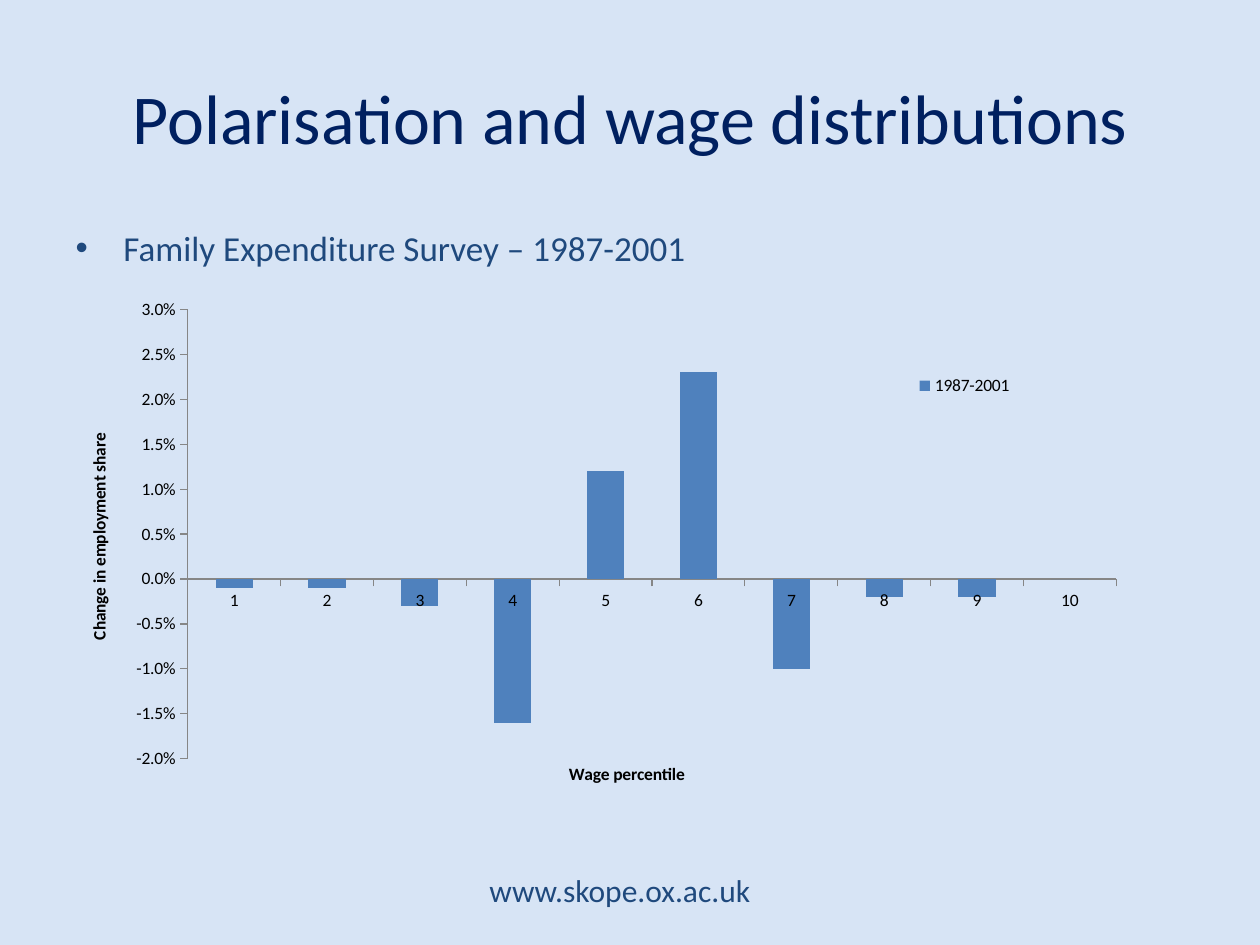
"""Build the slide on polarisation and wage distributions."""
from lxml import etree
from pptx import Presentation
from pptx import util as u
from pptx.chart import data
from pptx.dml.color import RGBColor
from pptx.enum import chart as charts, text
from pptx.oxml import ns

FONT = "Calibri"
BACKGROUND = RGBColor(0xD7, 0xE4, 0xF5)
NAVY = RGBColor(0x00, 0x20, 0x60)
BLUE = RGBColor(0x1F, 0x49, 0x7D)
BAR = RGBColor(0x4F, 0x81, 0xBD)
AXIS = RGBColor(0x86, 0x86, 0x86)
BLACK = RGBColor(0, 0, 0)

CHART_WIDTH, CHART_HEIGHT = 8.43, 4.02
SHARE_CHANGES = (-0.001, -0.001, -0.003, -0.016, 0.012,
                 0.023, -0.01, -0.002, -0.002, 0)


def place(shape, left, top, width, height):
    shape.left, shape.top = u.Inches(left), u.Inches(top)
    shape.width, shape.height = u.Inches(width), u.Inches(height)


def style_font(font, size, color, bold=False):
    font.name, font.size, font.bold = FONT, u.Pt(size), bold
    font.color.rgb = color


def write(frame, words, size=20, color=BLUE, align=None, anchor=None,
          bullet=None, bold=False):
    frame.word_wrap = True
    if anchor is not None:
        frame.vertical_anchor = anchor
    paragraph = frame.paragraphs[0]
    paragraph.space_before = u.Pt(0)
    if align is not None:
        paragraph.alignment = align
    if bullet:
        properties = paragraph._p.get_or_add_pPr()
        properties.set("marL", str(u.Inches(0.38)))
        properties.set("indent", str(u.Inches(-0.38)))
        etree.SubElement(properties, ns.qn("a:buChar")).set("char", bullet)
    run = paragraph.add_run()
    run.text = words
    style_font(run.font, size, color, bold)


def set_layout(element, index, inner=False, **inches):
    """Place a chart part by inches from the chart's top left corner."""
    for old in element.findall(ns.qn("c:layout")):
        element.remove(old)
    layout = etree.Element(ns.qn("c:layout"))
    manual = etree.SubElement(layout, ns.qn("c:manualLayout"))
    settings = {"layoutTarget": "inner"} if inner else {}
    settings.update(xMode="edge", yMode="edge")
    for side, length in inches.items():
        settings[side] = length / (CHART_WIDTH if side in "xw" else CHART_HEIGHT)
    for tag, value in settings.items():
        etree.SubElement(manual, ns.qn(f"c:{tag}")).set("val", str(value))
    element.insert(index, layout)


def format_axis(axis, title, x, y):
    axis.has_major_gridlines = False
    axis.major_tick_mark = charts.XL_TICK_MARK.OUTSIDE
    axis.minor_tick_mark = charts.XL_TICK_MARK.NONE
    axis.format.line.color.rgb = AXIS
    axis.format.line.width = u.Pt(0.75)
    style_font(axis.tick_labels.font, 10, BLACK)
    write(axis.axis_title.text_frame, title, size=10, color=BLACK, bold=True)
    set_layout(axis.axis_title._element, 1, x=x, y=y)


def add_share_chart(slide):
    shares = data.CategoryChartData(number_format="0.0%")
    shares.categories = [str(decile) for decile in range(1, 11)]
    shares.add_series("1987-2001", SHARE_CHANGES)
    chart = slide.shapes.add_chart(
        charts.XL_CHART_TYPE.COLUMN_CLUSTERED, u.Inches(0.59), u.Inches(2.25),
        u.Inches(CHART_WIDTH), u.Inches(CHART_HEIGHT), shares).chart
    chart.has_title = False
    style_font(chart.font, 10, BLACK)
    set_layout(chart._chartSpace.chart.plotArea, 0, inner=True,
               x=0.9, y=0.21, w=7.37, h=3.6)

    columns = chart.plots[0]
    columns.gap_width = 150
    columns.vary_by_categories = False
    series = columns.series[0]
    series.invert_if_negative = False
    series.format.fill.solid()
    series.format.fill.fore_color.rgb = BAR

    format_axis(chart.category_axis, "Wage percentile", 3.9, 3.82)
    change_axis = chart.value_axis
    format_axis(change_axis, "Change in employment share", 0.08, 1.19)
    change_axis.minimum_scale, change_axis.maximum_scale = -0.02, 0.03
    change_axis.major_unit = 0.005
    change_axis.tick_labels.number_format = "0.0%"
    change_axis.tick_labels.number_format_is_linked = False

    chart.has_legend = True
    chart.legend.position = charts.XL_LEGEND_POSITION.RIGHT
    chart.legend.include_in_layout = False
    style_font(chart.legend.font, 10, BLACK)
    set_layout(chart.legend._element, 1, x=6.56, y=0.66, w=1.01, h=0.32)


def main():
    deck = Presentation()
    deck.slide_width, deck.slide_height = u.Inches(10), u.Inches(7.5)
    slide = deck.slides.add_slide(deck.slide_layouts[1])
    slide.background.fill.solid()
    slide.background.fill.fore_color.rgb = BACKGROUND

    address = slide.shapes.add_textbox(0, 0, 0, 0)
    place(address, 3.2, 6.86, 3.44, 0.4)
    write(address.text_frame, "www.skope.ox.ac.uk", size=18,
          align=text.PP_ALIGN.CENTER, anchor=text.MSO_ANCHOR.MIDDLE)

    heading = slide.shapes.title
    place(heading, 0.5, 0.3, 9, 1.25)
    write(heading.text_frame, "Polarisation and wage distributions", size=40,
          color=NAVY, align=text.PP_ALIGN.CENTER, anchor=text.MSO_ANCHOR.MIDDLE)

    survey = slide.placeholders[1]
    place(survey, 0.5, 1.75, 9, 4.95)
    write(survey.text_frame, "Family Expenditure Survey – 1987-2001", bullet="•")

    add_share_chart(slide)
    deck.save("out.pptx")


if __name__ == "__main__":
    main()
